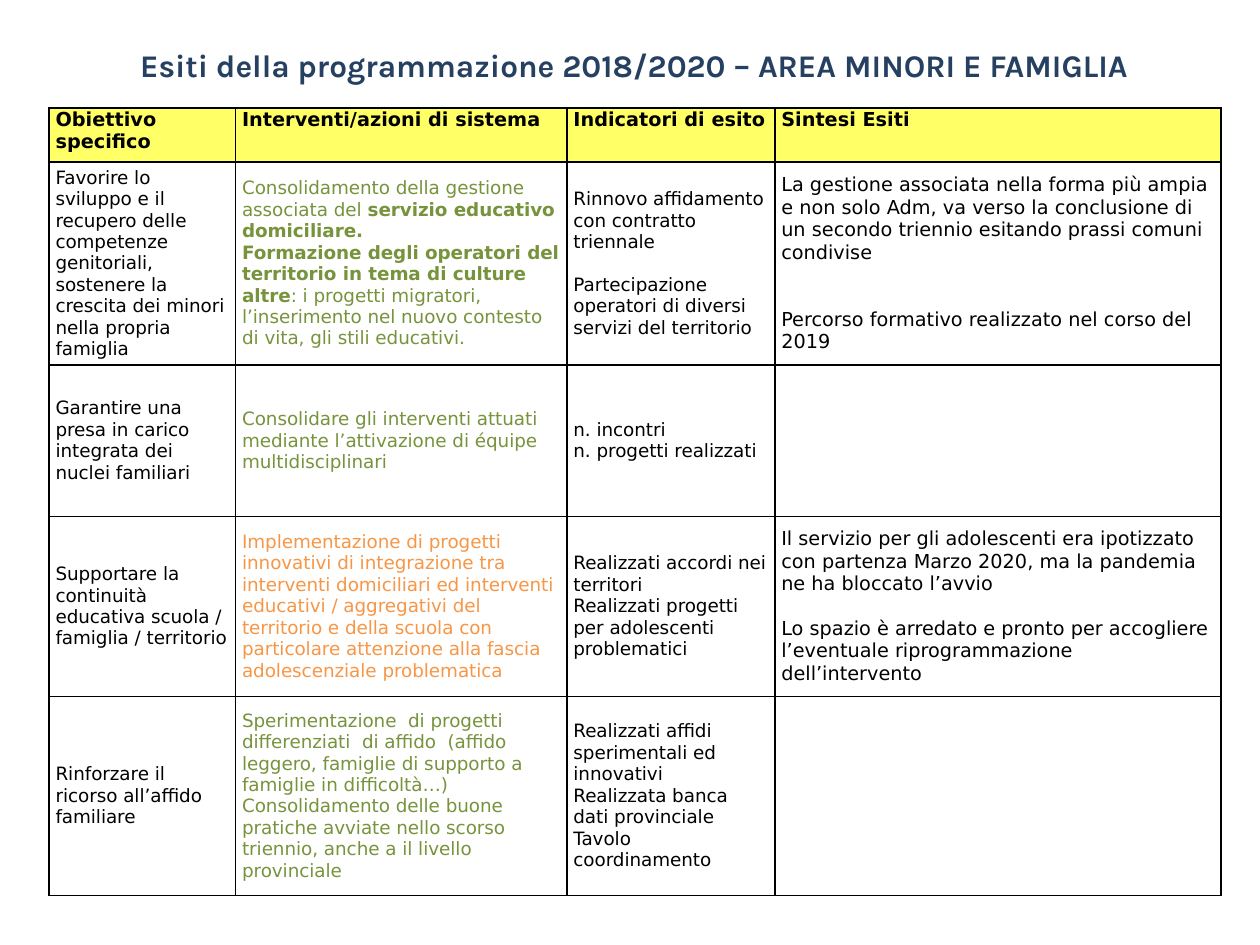
from dataclasses import dataclass

from lxml.etree import SubElement
from pptx import Presentation
from pptx.dml.color import RGBColor
from pptx.enum.text import MSO_ANCHOR as Anchor, MSO_AUTO_SIZE as AutoSize, PP_ALIGN as Align
from pptx.oxml.ns import qn
from pptx.util import Cm, Pt

BLACK, NAVY, YELLOW = "000000", "254061", "FFFF66"
GREEN, ORANGE = "77933C", "F79646"
TITLE = "Esiti della programmazione 2018/2020 – AREA MINORI E FAMIGLIA"
COLUMN_WIDTHS = (3.76, 6.68, 4.19, 8.99)
ROW_HEIGHTS = (1.09, 4.09, 3.05, 3.63, 4.01)
COLUMN_SIZES = (10.5, 10.5, 10.5, 11)
LINE_HEIGHT = 1.164


@dataclass
class Entry:
    """Text of one cell, with ** around bold parts."""
    paragraphs: tuple = ()
    color: str = BLACK
    gap_lines: int = 0


HEADINGS = (
    ("Obiettivo", "specifico"),
    ("Interventi/azioni di sistema",),
    ("Indicatori di esito",),
    ("Sintesi Esiti",),
)
ROWS = (
    (
        Entry(("Favorire lo sviluppo e il recupero delle competenze genitoriali, "
               "sostenere la crescita dei minori nella propria famiglia",)),
        Entry(("Consolidamento della gestione associata del **servizio educativo domiciliare.**",
               "**Formazione degli operatori del territorio in tema di culture altre**: i progetti "
               "migratori, l’inserimento nel nuovo contesto di vita, gli stili educativi."), GREEN),
        Entry(("Rinnovo affidamento con contratto triennale",
               "Partecipazione operatori di diversi servizi del territorio"), gap_lines=1),
        Entry(("La gestione associata nella forma più ampia e non solo Adm, va verso la "
               "conclusione di un secondo triennio esitando prassi comuni condivise",
               "Percorso formativo realizzato nel corso del 2019"), gap_lines=2),
    ),
    (
        Entry(("Garantire una presa in carico integrata dei nuclei familiari",)),
        Entry(("Consolidare gli interventi attuati mediante l’attivazione di équipe "
               "multidisciplinari",), GREEN),
        Entry(("n. incontri", "n. progetti realizzati")),
        Entry(),
    ),
    (
        Entry(("Supportare la continuità educativa scuola / famiglia / territorio",)),
        Entry(("Implementazione di progetti innovativi di integrazione tra interventi "
               "domiciliari ed interventi educativi / aggregativi del territorio e della scuola "
               "con particolare attenzione alla fascia adolescenziale problematica",), ORANGE),
        Entry(("Realizzati accordi nei territori",
               "Realizzati progetti per adolescenti problematici")),
        Entry(("Il servizio per gli adolescenti era ipotizzato con partenza Marzo 2020, ma la "
               "pandemia ne ha bloccato l’avvio",
               "Lo spazio è arredato e pronto per accogliere l’eventuale riprogrammazione "
               "dell’intervento"), gap_lines=1),
    ),
    (
        Entry(("Rinforzare il ricorso all’affido familiare",)),
        Entry(("Sperimentazione  di progetti differenziati  di affido  (affido leggero, famiglie "
               "di supporto a famiglie in difficoltà…)",
               "Consolidamento delle buone pratiche avviate nello scorso triennio, anche a il "
               "livello provinciale"), GREEN),
        Entry(("Realizzati affidi sperimentali ed innovativi",
               "Realizzata banca dati provinciale", "Tavolo coordinamento")),
        Entry(),
    ),
)


def rgb(value):
    """Turn a hex string into a colour."""
    return RGBColor.from_string(value)


def set_font(font, name, size, color, bold=False):
    """Set the face, size, colour and weight of a font."""
    font.name, font.size, font.bold = name, Pt(size), bold
    font.color.rgb = rgb(color)


def add_title(slide):
    """Fill and place the title placeholder."""
    title = slide.shapes.title
    title.left, title.top, title.width, title.height = Cm(0.58), Cm(0.79), Cm(24.41), Cm(1.02)
    frame = title.text_frame
    frame.text = TITLE
    frame.auto_size = AutoSize.NONE
    frame.vertical_anchor = Anchor.MIDDLE
    paragraph = frame.paragraphs[0]
    paragraph.alignment = Align.CENTER
    set_font(paragraph.font, "Karla", 18, NAVY, True)


def add_borders(cell):
    """Draw a thin black line on each side of a cell."""
    properties = cell._tc.get_or_add_tcPr()
    for side in ("lnL", "lnR", "lnT", "lnB"):
        line = SubElement(properties, qn(f"a:{side}"), w=str(Pt(1)))
        fill = SubElement(line, qn("a:solidFill"))
        SubElement(fill, qn("a:srgbClr"), val=BLACK)


def format_cell(cell, anchor, fill=None):
    """Set borders, margins, anchor and fill of a cell."""
    add_borders(cell)
    cell.margin_left = cell.margin_right = Cm(0.13)
    cell.margin_top = cell.margin_bottom = 0
    cell.vertical_anchor = anchor
    if fill:
        cell.fill.solid()
        cell.fill.fore_color.rgb = rgb(fill)
    else:
        cell.fill.background()


def write_cell(cell, entry, size, alignment=Align.LEFT, bold=False):
    """Write the paragraphs of an entry into a cell."""
    frame = cell.text_frame
    for index, text in enumerate(entry.paragraphs):
        paragraph = frame.add_paragraph() if index else frame.paragraphs[0]
        paragraph.alignment = alignment
        set_font(paragraph.font, "DejaVu Sans", size, entry.color, bold)
        if index and entry.gap_lines:
            paragraph.space_before = Pt(round(entry.gap_lines * size * LINE_HEIGHT, 1))
        for part, words in enumerate(text.split("**")):
            if words:
                run = paragraph.add_run()
                run.text = words
                if part % 2:
                    run.font.bold = True


def add_outcome_table(slide):
    """Add the table of goals, actions, indicators and outcomes."""
    table = slide.shapes.add_table(
        len(ROW_HEIGHTS), len(COLUMN_WIDTHS), Cm(0.99), Cm(2.18),
        Cm(sum(COLUMN_WIDTHS)), Cm(sum(ROW_HEIGHTS))).table
    for column, width in zip(table.columns, COLUMN_WIDTHS):
        column.width = Cm(width)
    for row, height in zip(table.rows, ROW_HEIGHTS):
        row.height = Cm(height)
    for column, heading in enumerate(HEADINGS):
        cell = table.cell(0, column)
        format_cell(cell, Anchor.TOP, YELLOW)
        write_cell(cell, Entry(heading), 11, Align.JUSTIFY, True)
    for row, entries in enumerate(ROWS, 1):
        for column, entry in enumerate(entries):
            cell = table.cell(row, column)
            format_cell(cell, Anchor.MIDDLE)
            write_cell(cell, entry, COLUMN_SIZES[column])


def main():
    """Build and save the slide."""
    presentation = Presentation()
    presentation.slide_width, presentation.slide_height = Cm(25.4), Cm(19.05)
    slide = presentation.slides.add_slide(presentation.slide_layouts[5])
    add_title(slide)
    add_outcome_table(slide)
    presentation.save("out.pptx")


if __name__ == "__main__":
    main()
